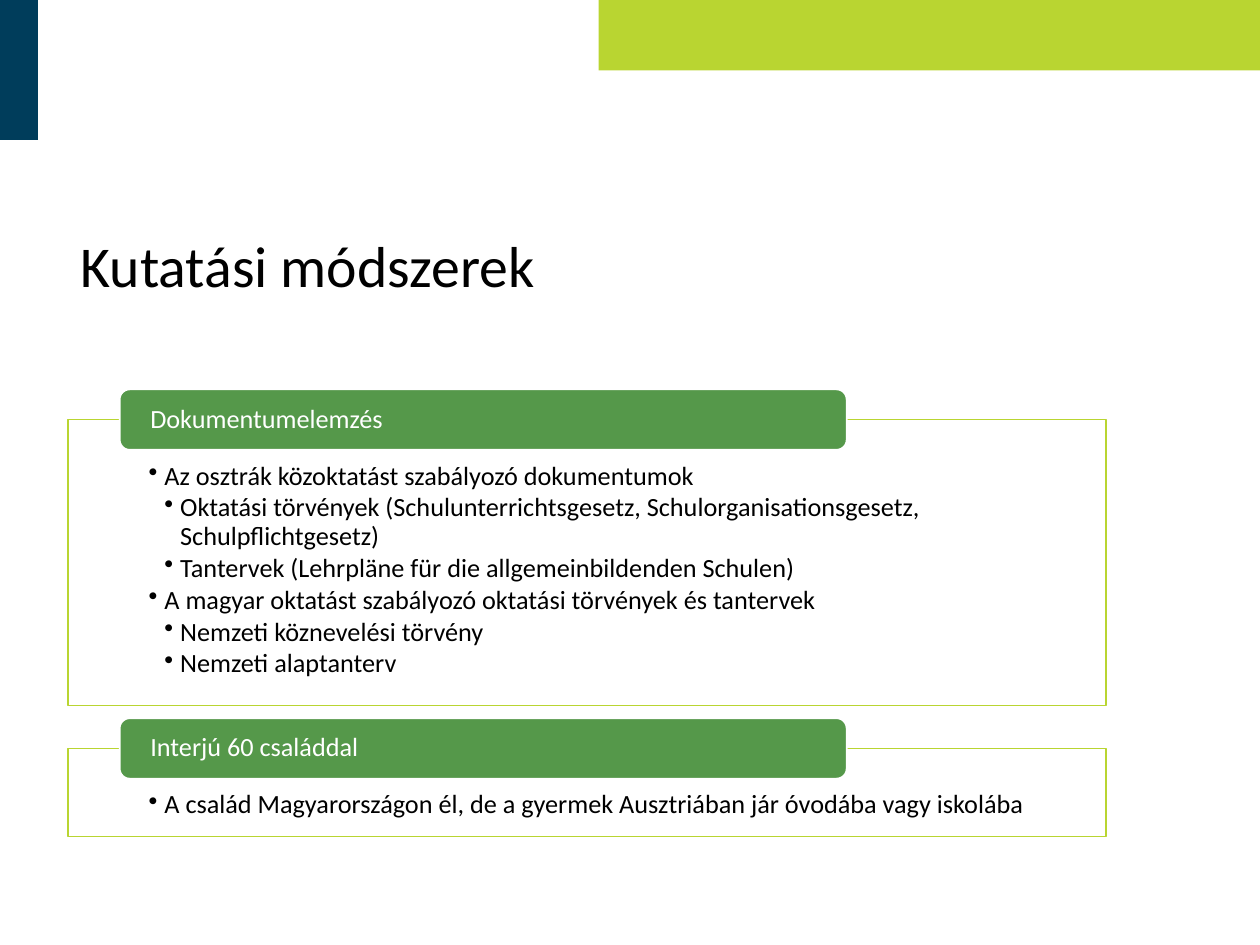
from lxml.etree import SubElement
from pptx import Presentation
from pptx.dml.color import RGBColor
from pptx.enum.shapes import MSO_SHAPE
from pptx.enum.text import MSO_ANCHOR, MSO_AUTO_SIZE, PP_ALIGN
from pptx.oxml.ns import qn
from pptx.util import Inches, Pt

COLORS = {
    "lime": "B9D531",
    "navy": "003D5B",
    "green": "55984A",
    "white": "FFFFFF",
    "black": "000000",
}
SECTIONS = [
    (3.33, 2.27, "Dokumentumelemzés", [
        (1, "Az osztrák közoktatást szabályozó dokumentumok"),
        (2, "Oktatási törvények (Schulunterrichtsgesetz, Schulorganisationsgesetz, Schulpflichtgesetz)"),
        (2, "Tantervek (Lehrpläne für die allgemeinbildenden Schulen)"),
        (1, "A magyar oktatást szabályozó oktatási törvények és tantervek"),
        (2, "Nemzeti köznevelési törvény"),
        (2, "Nemzeti alaptanterv"),
    ]),
    (5.94, 0.7, "Interjú 60 családdal", [
        (1, "A család Magyarországon él, de a gyermek Ausztriában jár óvodába vagy iskolába"),
    ]),
]


def add_box(kind, left, top, width, height, fill, line=None):
    box = page.shapes.add_shape(kind, Inches(left), Inches(top), Inches(width), Inches(height))
    box.shadow.inherit = False
    box.fill.solid()
    box.fill.fore_color.rgb = RGBColor.from_string(COLORS[fill])
    if line:
        box.line.color.rgb = RGBColor.from_string(COLORS[line])
        box.line.width = Pt(1)
    else:
        box.line.fill.background()
    return box


def write(para, text, size, color):
    para.alignment = PP_ALIGN.LEFT
    para.line_spacing = 0.9
    span = para.add_run()
    span.text = text
    span.font.name = "Calibri"
    span.font.size = Pt(size)
    span.font.color.rgb = RGBColor.from_string(COLORS[color])


deck = Presentation()
deck.slide_width, deck.slide_height = Inches(10), Inches(7.5)
page = deck.slides.add_slide(deck.slide_layouts[5])

add_box(MSO_SHAPE.RECTANGLE, 4.75, 0, 5.25, 0.56, "lime")
add_box(MSO_SHAPE.RECTANGLE, -0.01, 0, 0.31, 1.11, "navy")

title = page.shapes.title
title.left, title.top = Inches(0.54), Inches(1.41)
title.width, title.height = Inches(8.24), Inches(1.45)
title.text_frame.auto_size = MSO_AUTO_SIZE.NONE
title.text_frame.vertical_anchor = MSO_ANCHOR.MIDDLE
write(title.text_frame.paragraphs[0], "Kutatási módszerek", 33, "black")

for top, height, heading, items in SECTIONS:
    panel = add_box(MSO_SHAPE.RECTANGLE, 0.54, top, 8.24, height, "white", "lime")
    panel_color = panel.fill._xPr.find(qn("a:solidFill"))[0]
    SubElement(panel_color, qn("a:alpha"), val="90000")
    frame = panel.text_frame
    frame.word_wrap = True
    frame.vertical_anchor = MSO_ANCHOR.TOP
    frame.margin_left = frame.margin_right = Inches(0.64)
    frame.margin_top, frame.margin_bottom = Inches(0.34), Inches(0.12)
    for index, (level, text) in enumerate(items):
        para = frame.add_paragraph() if index else frame.paragraphs[0]
        para.level = level
        para.space_after = Pt(2)
        properties = para._p.get_or_add_pPr()
        properties.set("marL", str(Inches(0.125 * level)))
        properties.set("indent", str(Inches(-0.125)))
        SubElement(properties, qn("a:buChar"), char="•")
        write(para, text, 15, "black")

    label = add_box(MSO_SHAPE.ROUNDED_RECTANGLE, 0.95, top - 0.24, 5.77, 0.48, "green", "white")
    frame = label.text_frame
    frame.word_wrap = True
    frame.vertical_anchor = MSO_ANCHOR.MIDDLE
    frame.margin_left = frame.margin_right = Inches(0.22)
    frame.margin_top = frame.margin_bottom = 0
    write(frame.paragraphs[0], heading, 15, "white")

deck.save("out.pptx")
